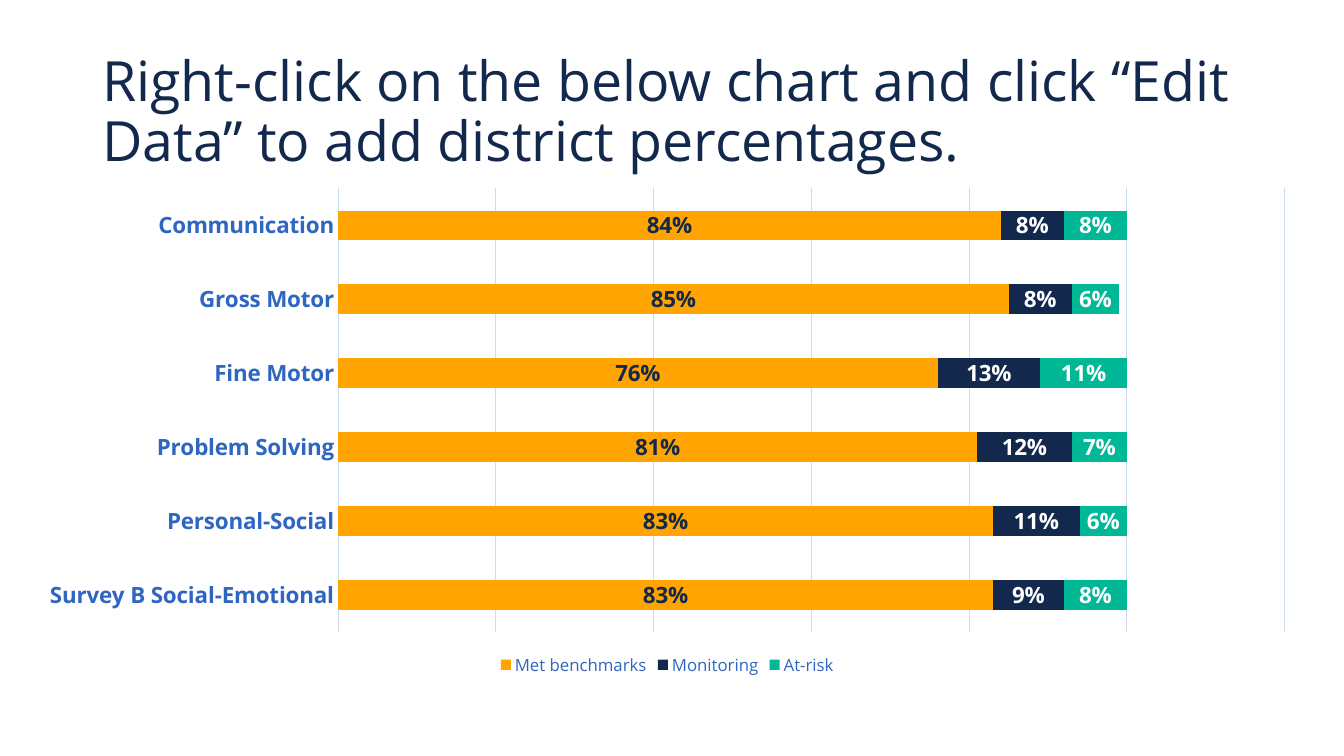
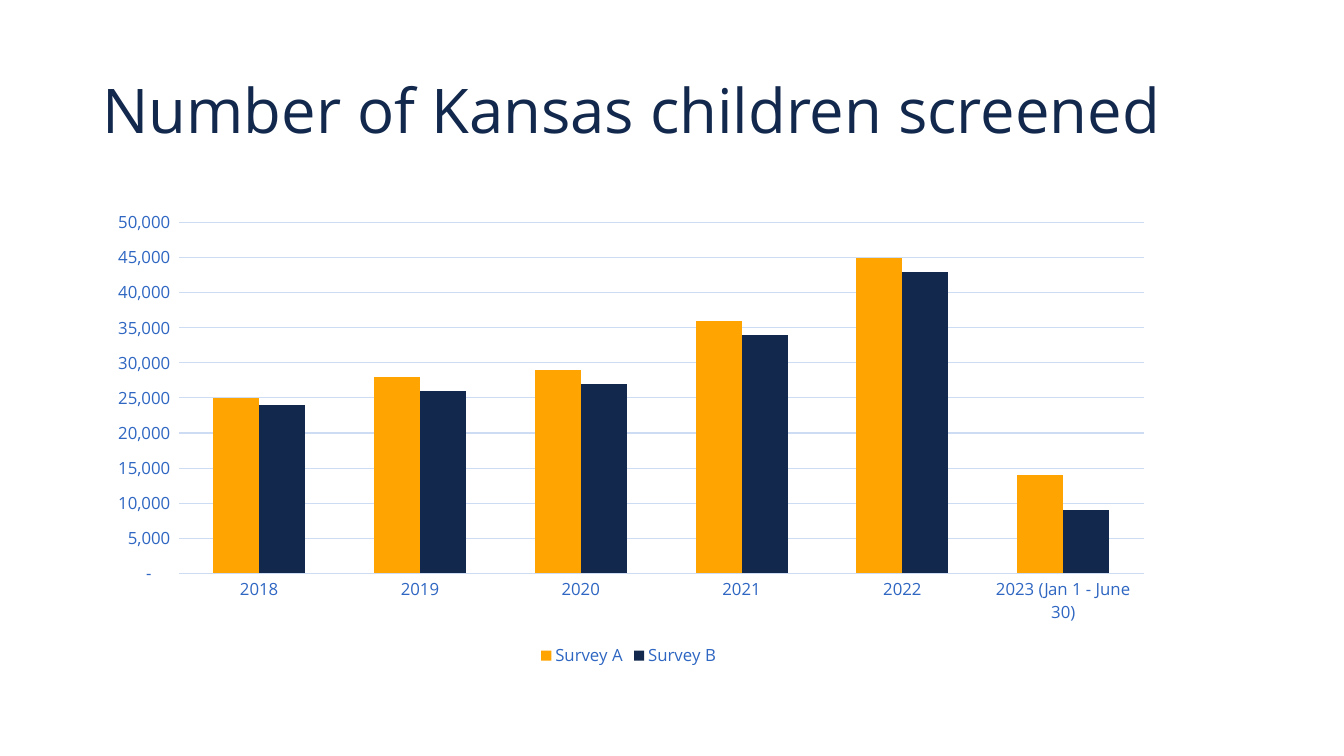
from pptx import Presentation
from pptx.chart.data import CategoryChartData
from pptx.dml.color import RGBColor
from pptx.enum.chart import (
    XL_CHART_TYPE as ChartType,
    XL_LABEL_POSITION as LabelPosition,
    XL_LEGEND_POSITION as LegendPosition,
    XL_TICK_MARK as TickMark,
)
from pptx.enum.text import MSO_ANCHOR as Anchor
from pptx.util import Inches, Pt

FONT = "Open Sans"
NAVY, BLUE, PALE = "12284C", "2E66C2", "CDDBF3"
ORANGE, GREEN, WHITE = "FFA400", "00B796", "FFFFFF"
PERCENT = "0%"
ACCOUNTING = '_(* #,##0_);_(* \\(#,##0\\);_(* "-"??_);_(@_)'
COLUMNS, ROWS = 160, 90
TITLE_AREA = (11, 4.8, 138, 17.4)


def color(hex_value):
    return RGBColor.from_string(hex_value)


def style_font(font, size, hex_value, bold=False):
    font.name = FONT
    font.size = Pt(size)
    font.bold = bold
    font.color.rgb = color(hex_value)


def style_line(line, hex_value):
    line.color.rgb = color(hex_value)
    line.width = Pt(0.75)


class SlideBuilder:
    """Holds the deck, its shared style and the slide being filled."""

    def __init__(self):
        self.deck = Presentation()
        self.deck.slide_width = Inches(13.33)
        self.deck.slide_height = Inches(7.5)
        self.slide = None

    def area(self, left, top, width, height):
        """Turn grid columns and rows into slide lengths."""
        column = self.deck.slide_width / COLUMNS
        row = self.deck.slide_height / ROWS
        return [round(length) for length in
                (left * column, top * row, width * column, height * row)]

    def new_slide(self, title, size):
        self.slide = self.deck.slides.add_slide(self.deck.slide_layouts[6])
        frame = self.slide.shapes.add_textbox(*self.area(*TITLE_AREA)).text_frame
        frame.word_wrap = True
        frame.vertical_anchor = Anchor.MIDDLE
        frame.text = title
        para = frame.paragraphs[0]
        para.line_spacing = 0.9
        style_font(para.runs[0].font, size, NAVY)

    def chart(self, kind, area, categories, series, number_format, overlap):
        """Add a chart; series holds (name, fill colour, values) rows."""
        data = CategoryChartData(number_format=number_format)
        data.categories = categories
        for name, _, values in series:
            data.add_series(name, values)
        chart = self.slide.shapes.add_chart(kind, *self.area(*area), data).chart
        chart.has_title = False
        style_font(chart.font, 10, NAVY)

        chart.has_legend = True
        chart.legend.position = LegendPosition.BOTTOM
        chart.legend.include_in_layout = False
        style_font(chart.legend.font, 12, BLUE)

        plot = chart.plots[0]
        plot.vary_by_categories = False
        plot.gap_width = 150
        plot.overlap = overlap
        for bars, (_, fill, _) in zip(plot.series, series):
            bars.invert_if_negative = False
            bars.format.fill.solid()
            bars.format.fill.fore_color.rgb = color(fill)
        return chart

    def category_axis(self, chart, size, bold=False):
        axis = chart.category_axis
        axis.major_tick_mark = axis.minor_tick_mark = TickMark.NONE
        axis.has_major_gridlines = False
        style_font(axis.tick_labels.font, size, BLUE, bold)
        style_line(axis.format.line, PALE)

    def value_axis(self, chart, maximum, step, number_format, visible=True):
        axis = chart.value_axis
        axis.minimum_scale, axis.maximum_scale = 0, maximum
        axis.major_unit = step
        axis.major_tick_mark = axis.minor_tick_mark = TickMark.NONE
        axis.has_major_gridlines = True
        style_line(axis.major_gridlines.format.line, PALE)
        axis.format.line.fill.background()
        style_font(axis.tick_labels.font, 12, BLUE)
        axis.tick_labels.number_format = number_format
        axis.tick_labels.number_format_is_linked = False
        axis.visible = visible

    def bar_labels(self, chart, number_format, text_colors):
        for bars, text_color in zip(chart.plots[0].series, text_colors):
            labels = bars.data_labels
            labels.show_value = True
            labels.position = LabelPosition.CENTER
            labels.number_format = number_format
            labels.number_format_is_linked = False
            style_font(labels.font, 16, text_color, bold=True)


def benchmark_slide(builder):
    builder.new_slide("Right-click on the below chart and click “Edit Data” "
                      "to add district percentages.", 39.6)
    chart = builder.chart(
        ChartType.BAR_STACKED, (2.88, 21.24, 153.12, 59.76),
        ["Survey B Social-Emotional", "Personal-Social", "Problem Solving",
         "Fine Motor", "Gross Motor", "Communication"],
        [("Met benchmarks", ORANGE, (0.83, 0.83, 0.81, 0.76, 0.85, 0.84)),
         ("Monitoring", NAVY, (0.09, 0.11, 0.12, 0.13, 0.08, 0.08)),
         ("At-risk", GREEN, (0.08, 0.06, 0.07, 0.11, 0.06, 0.08))],
        PERCENT, overlap=100)
    builder.category_axis(chart, 16, bold=True)
    builder.value_axis(chart, 1.2, 0.2, PERCENT, visible=False)
    builder.bar_labels(chart, PERCENT, (NAVY, WHITE, WHITE))


def screening_slide(builder):
    builder.new_slide("Number of Kansas children screened", 44)
    chart = builder.chart(
        ChartType.COLUMN_CLUSTERED, (11, 24, 127.7, 55.92),
        ["2018", "2019", "2020", "2021", "2022", "2023 (Jan 1 - June 30)"],
        [("Survey A", ORANGE, (25000, 28000, 29000, 36000, 45000, 14000)),
         ("Survey B", NAVY, (24000, 26000, 27000, 34000, 43000, 9000))],
        ACCOUNTING, overlap=0)
    builder.category_axis(chart, 12)
    builder.value_axis(chart, 50000, 5000, ACCOUNTING)


def main():
    builder = SlideBuilder()
    benchmark_slide(builder)
    screening_slide(builder)
    builder.deck.save("out.pptx")


if __name__ == "__main__":
    main()
